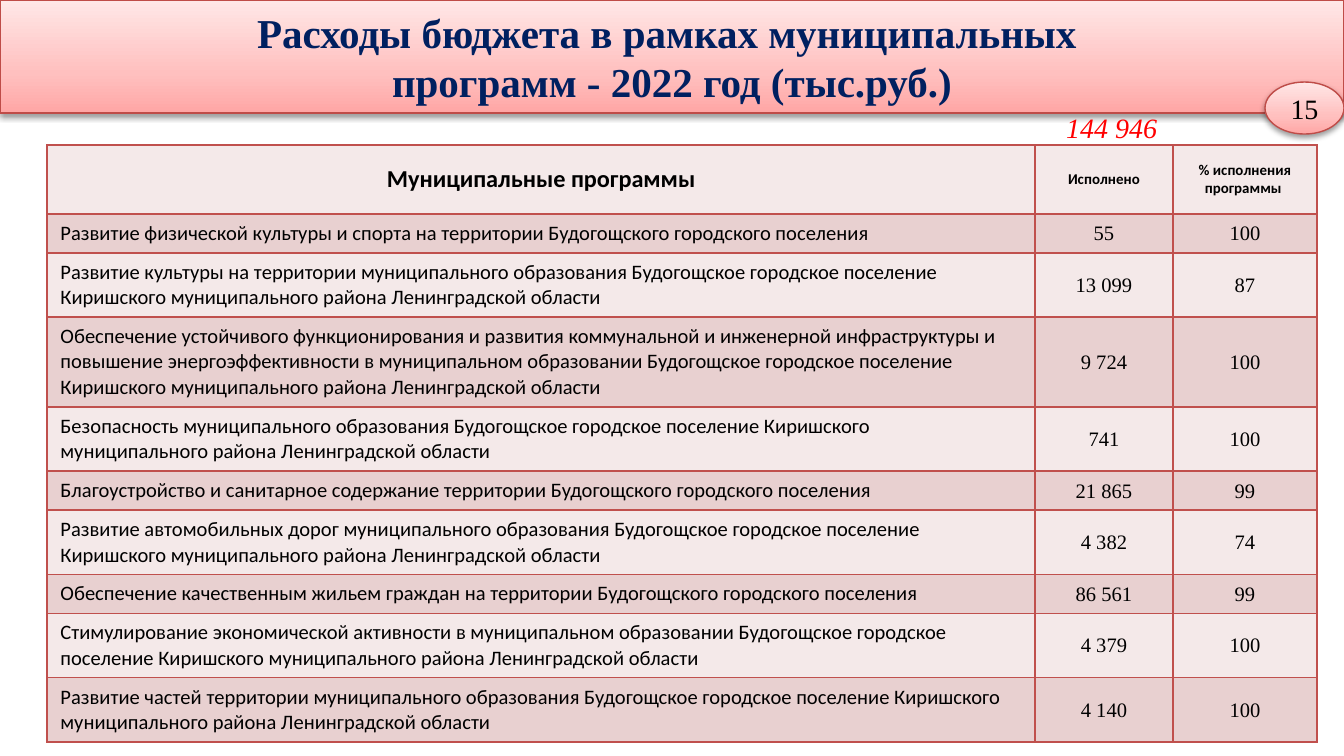
"""Build the slide on 2022 budget spending by municipal programme."""
from lxml import etree
from pptx import Presentation
from pptx import util as u
from pptx.dml.color import RGBColor
from pptx.enum import shapes, text
from pptx.oxml.ns import qn

PX = 914400 / 134.4
SERIF, SANS = "Times New Roman", "Calibri"
TITLE = ["Расходы бюджета в рамках муниципальных ", "программ - 2022 год (тыс.руб.)"]
TOTAL, PAGE = "144 946", "15"
HEADER = [("Муниципальные программы", 13), ("Исполнено", 8), ("% исполнения программы ", 8)]
DISTRICT = "Киришского муниципального района Ленинградской области"
PROGRAMMES = [
    ("Развитие физической культуры и спорта на территории Будогощского городского поселения",
     "55", "100", 1),
    ("Развитие культуры на территории муниципального образования Будогощское городское "
     f"поселение {DISTRICT}", "13 099", "87", 2),
    ("Обеспечение устойчивого функционирования и развития коммунальной и инженерной "
     "инфраструктуры и повышение энергоэффективности в муниципальном образовании "
     f"Будогощское городское поселение {DISTRICT}", "9 724", "100", 3),
    ("Безопасность муниципального образования Будогощское городское поселение "
     f"{DISTRICT}", "741", "100", 2),
    ("Благоустройство и санитарное содержание территории Будогощского городского поселения",
     "21 865", "99", 1),
    ("Развитие автомобильных дорог муниципального образования Будогощское городское "
     f"поселение {DISTRICT}", "4 382", "74", 2),
    ("Обеспечение качественным жильем граждан на территории Будогощского городского поселения",
     "86 561", "99", 1),
    ("Стимулирование экономической активности в муниципальном образовании Будогощское "
     f"городское поселение {DISTRICT}", "4 379", "100", 2),
    ("Развитие частей территории муниципального образования Будогощское городское "
     f"поселение {DISTRICT}", "4 140", "100", 2),
]
COLUMNS = [988, 138, 144]
HEADER_HEIGHT = 69
ROW_HEIGHTS = {1: 39, 2: 64, 3: 90}
BANDS = ["F4E9E9", "E8D0D0"]
GRADIENT = [(0, "FFA6A5"), (35, "FFC0BF"), (100, "FFE7E7")]
CENTER, LEFT = text.PP_ALIGN.CENTER, text.PP_ALIGN.LEFT


def px(n):
    return u.Emu(round(n * PX))


def rgb(value):
    return RGBColor.from_string(value)


def child(parent, tag, **attrs):
    return etree.SubElement(parent, qn(f"a:{tag}"), {k: str(v) for k, v in attrs.items()})


def write(tf, lines, size, font=SERIF, color="000000", align=CENTER, bold=False, italic=False):
    for i, line in enumerate(lines):
        p = tf.add_paragraph() if i else tf.paragraphs[0]
        p.alignment = align
        r = p.add_run()
        r.text = line
        f = r.font
        f.size, f.name, f.bold, f.italic = u.Pt(size), font, bold, italic
        f.color.rgb = rgb(color)


def glossy(slide, kind, box):
    sp = slide.shapes.add_shape(kind, *map(px, box))
    sp.fill.gradient()
    sp.fill.gradient_angle = 90
    stops = sp._element.spPr.find(".//" + qn("a:gsLst"))
    for old in list(stops):
        stops.remove(old)
    for pos, color in GRADIENT:
        child(child(stops, "gs", pos=pos * 1000), "srgbClr", val=color)
    sp.line.color.rgb = rgb("BF4C48")
    sp.line.width = u.Pt(0.75)
    sp.shadow.inherit = False
    effects = sp._element.spPr.find(qn("a:effectLst"))
    shadow = child(effects, "outerShdw", blurRad=u.Pt(3.1), dist=u.Pt(1.6),
                   dir=5400000, rotWithShape=0)
    child(child(shadow, "srgbClr", val="000000"), "alpha", val=38000)
    tf = sp.text_frame
    tf.vertical_anchor = text.MSO_ANCHOR.MIDDLE
    return tf


def style_cell(cell, fill):
    tc_pr = cell._tc.get_or_add_tcPr()
    for side in ("lnL", "lnR", "lnT", "lnB"):
        line = child(tc_pr, side, w=u.Pt(1))
        child(child(line, "solidFill"), "srgbClr", val="C0504D")
    cell.fill.solid()
    cell.fill.fore_color.rgb = rgb(fill)


def add_programmes(slide):
    heights = [HEADER_HEIGHT] + [ROW_HEIGHTS[row[-1]] for row in PROGRAMMES]
    table = slide.shapes.add_table(len(heights), len(COLUMNS), px(47), px(145),
                                   px(sum(COLUMNS)), px(sum(heights))).table
    for column, width in zip(table.columns, COLUMNS):
        column.width = px(width)
    for i, height in enumerate(heights):
        table.rows[i].height = px(height)
        for j in range(len(COLUMNS)):
            cell = table.cell(i, j)
            style_cell(cell, BANDS[i % 2])
            if i == 0 or j:
                cell.vertical_anchor = text.MSO_ANCHOR.MIDDLE
            if i == 0:
                label, size = HEADER[j]
                write(cell.text_frame, [label], size, SANS, bold=True)
            elif j == 0:
                write(cell.text_frame, [PROGRAMMES[i - 1][0]], 11, SANS, align=LEFT)
            else:
                cell.margin_left = cell.margin_right = cell.margin_top = px(1)
                cell.margin_bottom = 0
                write(cell.text_frame, [PROGRAMMES[i - 1][j]], 11)


def main():
    prs = Presentation()
    prs.slide_width, prs.slide_height = px(1344), px(756)
    s = prs.slides.add_slide(prs.slide_layouts[6])
    banner = glossy(s, shapes.MSO_SHAPE.RECTANGLE, (0, 0, 1344, 113))
    write(banner, TITLE, 22, color="002060", bold=True)
    add_programmes(s)
    badge = glossy(s, shapes.MSO_SHAPE.OVAL, (1265, 82, 79, 52))
    badge.word_wrap = False
    write(badge, [PAGE], 15)
    total = s.shapes.add_textbox(*map(px, (1053, 104, 119, 47))).text_frame
    write(total, [TOTAL], 15, color="FF0000", align=LEFT, italic=True)
    prs.save("out.pptx")


if __name__ == "__main__":
    main()
